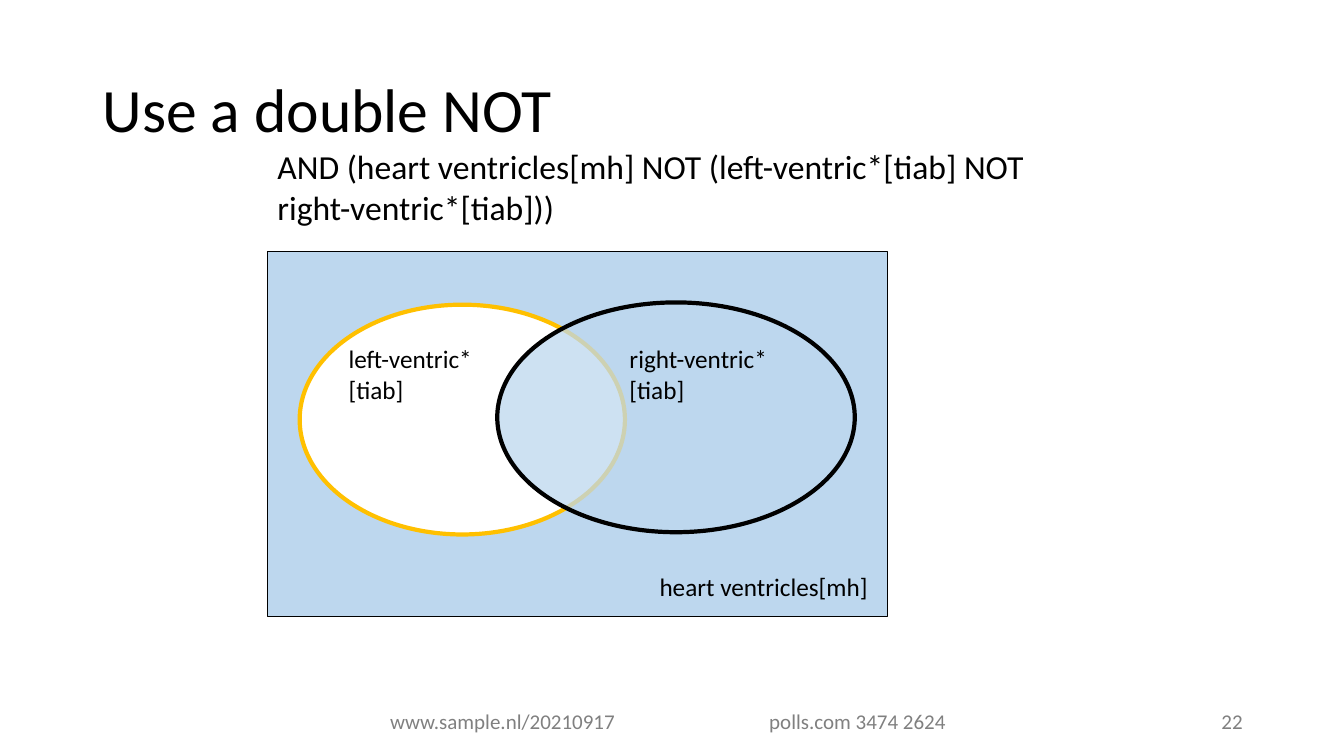
import dataclasses

import lxml.etree
import pptx
import pptx.dml.color
import pptx.enum.shapes
import pptx.enum.text
import pptx.oxml.ns
import pptx.util

ALIGN = pptx.enum.text.PP_ALIGN
ANCHOR = pptx.enum.text.MSO_ANCHOR
SHAPE = pptx.enum.shapes.MSO_SHAPE


@dataclasses.dataclass(frozen=True)
class Theme:
    font: str = "Calibri"
    text: str = "000000"
    muted: str = "808080"
    kept: str = "BDD7EE"
    removed: str = "FFFFFF"
    accent: str = "FFC000"
    title_size: int = 44
    query_size: int = 24
    label_size: int = 18
    footer_size: int = 15


THEME = Theme()
WIDTH = pptx.util.Inches(13.33)
HEIGHT = pptx.util.Inches(7.5)


def area(left, top, width, height):
    """Turn percentages of the slide's size into a position and size."""
    shares = ((left, WIDTH), (top, HEIGHT), (width, WIDTH), (height, HEIGHT))
    return [round(share * length / 100) for share, length in shares]


def color(value):
    return pptx.dml.color.RGBColor.from_string(value)


def write(shape, text, size, tone=THEME.text, align=ALIGN.LEFT, anchor=ANCHOR.TOP, spacing=1.0):
    frame = shape.text_frame
    frame.text = text
    frame.word_wrap = True
    frame.vertical_anchor = anchor
    for paragraph in frame.paragraphs:
        paragraph.alignment = align
        paragraph.line_spacing = spacing
        for run in paragraph.runs:
            run.font.name = THEME.font
            run.font.size = pptx.util.Pt(size)
            run.font.color.rgb = color(tone)


def add_title(slide, text, place):
    title = slide.shapes.title
    title.left, title.top, title.width, title.height = area(*place)
    write(title, text, THEME.title_size, anchor=ANCHOR.MIDDLE, spacing=0.9)


def add_text(slide, text, place, size, **text_format):
    write(slide.shapes.add_textbox(*area(*place)), text, size, **text_format)


def add_set(slide, kind, place, fill, line, weight, opacity=100):
    shape = slide.shapes.add_shape(kind, *area(*place))
    shape.shadow.inherit = False
    shape.fill.solid()
    shape.fill.fore_color.rgb = color(fill)
    shape.line.color.rgb = color(line)
    shape.line.width = pptx.util.Pt(weight)
    if opacity < 100:
        qualified = pptx.oxml.ns.qn
        solid = shape.element.spPr.find(qualified("a:solidFill"))
        alpha = lxml.etree.SubElement(solid[0], qualified("a:alpha"))
        alpha.set("val", str(opacity * 1000))


def add_diagram(slide):
    add_set(slide, SHAPE.RECTANGLE, (19.9, 33.2, 46.1, 48.3), THEME.kept, THEME.text, 0.5)
    add_set(slide, SHAPE.OVAL, (22.3, 40.3, 24.2, 30.4), THEME.removed, THEME.accent, 3)
    add_set(slide, SHAPE.OVAL, (37, 40, 26.6, 30.4), THEME.kept, THEME.text, 3, opacity=75)
    add_text(slide, "left-ventric*\n[tiab]", (25.2, 44.8, 21.2, 9.5), THEME.label_size)
    add_text(slide, "right-ventric*\n[tiab]", (46.1, 44.8, 14, 9.5), THEME.label_size)
    add_text(slide, "heart ventricles[mh]", (44.1, 74.9, 21.2, 5.3), THEME.label_size,
             align=ALIGN.RIGHT)


def add_footer(slide):
    for text, left, width, align in (
        ("www.sample.nl/20210917", 27.4, 20, ALIGN.CENTER),
        ("polls.com 3474 2624", 53.8, 20, ALIGN.CENTER),
        ("22", 70.7, 22.5, ALIGN.RIGHT),
    ):
        add_text(slide, text, (left, 92.7, width, 5.3), THEME.footer_size,
                 tone=THEME.muted, align=align, anchor=ANCHOR.MIDDLE)


def main():
    """Build the slide on combining search terms with a double NOT."""
    presentation = pptx.Presentation()
    presentation.slide_width, presentation.slide_height = WIDTH, HEIGHT
    slide = presentation.slides.add_slide(presentation.slide_layouts.get_by_name("Title Only"))
    add_title(slide, "Use a double NOT", (6.9, 5.3, 86.3, 19.3))
    add_diagram(slide)
    add_text(slide, "AND (heart ventricles[mh] NOT (left-ventric*[tiab] NOT\vright-ventric*[tiab]))",
             (19.9, 18.7, 58.4, 12.1), THEME.query_size)
    add_footer(slide)
    presentation.save("out.pptx")


if __name__ == "__main__":
    main()
